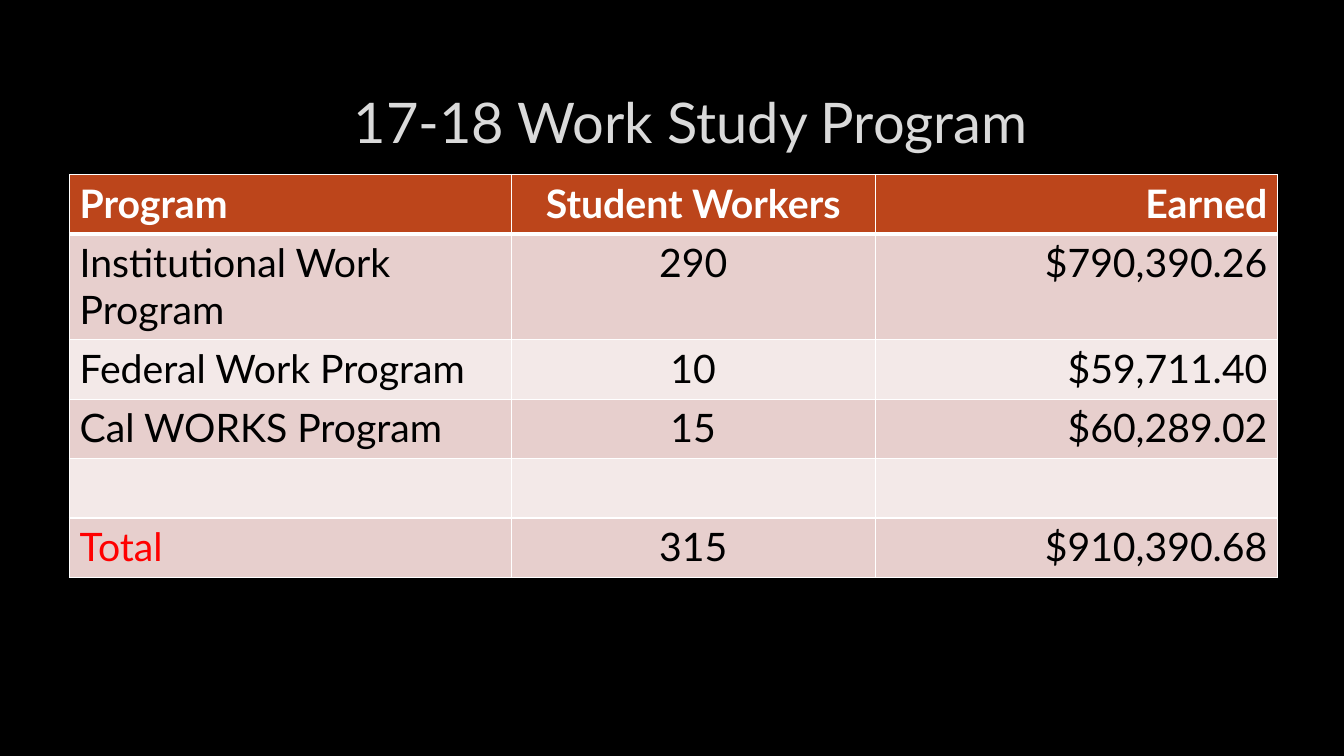
from lxml.etree import SubElement
from pptx import Presentation
from pptx.dml.color import RGBColor
from pptx.enum.text import MSO_ANCHOR, PP_ALIGN
from pptx.oxml import parse_xml
from pptx.oxml.ns import nsdecls, qn
from pptx.util import Inches, Pt

BLACK = RGBColor(0x00, 0x00, 0x00)
WHITE = RGBColor(0xFF, 0xFF, 0xFF)
RED = RGBColor(0xFF, 0x00, 0x00)
SILVER = RGBColor(0xDA, 0xDA, 0xDA)
RUST = RGBColor(0xBC, 0x45, 0x1B)
ROSE = RGBColor(0xE7, 0xCF, 0xCD)
PALE_ROSE = RGBColor(0xF3, 0xE9, 0xE8)

ROWS = [
    ("Program", "Student Workers", "Earned"),
    ("Institutional Work Program", "290", "$790,390.26"),
    ("Federal Work Program", "10", "$59,711.40"),
    ("Cal WORKS Program", "15", "$60,289.02"),
    ("", "", ""),
    ("Total", "315", "$910,390.68"),
]
COLUMN_WIDTHS = [4.38, 3.61, 3.99]
ROW_HEIGHTS = [0.59, 1.05, 0.59, 0.59, 0.59, 0.59]
ALIGNMENTS = [PP_ALIGN.LEFT, PP_ALIGN.CENTER, PP_ALIGN.RIGHT]


def write(frame, text, size=28, color=BLACK, bold=False, align=PP_ALIGN.LEFT):
    para = frame.paragraphs[0]
    para.alignment = align
    span = para.add_run()
    span.text = text
    span.font.name = "Lato"
    span.font.size = Pt(size)
    span.font.bold = bold
    span.font.color.rgb = color
    return span


def set_borders(cell, widths):
    """Draw white cell borders; widths maps the sides L, R, T and B to points."""
    properties = cell._tc.get_or_add_tcPr()
    for position, side in enumerate("LRTB"):
        line = parse_xml(
            f'<a:ln{side} {nsdecls("a")} w="{Pt(widths[side])}">'
            f'<a:solidFill><a:srgbClr val="{WHITE}"/></a:solidFill></a:ln{side}>'
        )
        properties.insert(position, line)


deck = Presentation()
deck.slide_width = Inches(13.33)
deck.slide_height = Inches(7.5)
page = deck.slides.add_slide(deck.slide_layouts[5])
page.background.fill.solid()
page.background.fill.fore_color.rgb = BLACK

title = page.shapes.title
title.left, title.top = Inches(1.19), Inches(0.67)
title.width, title.height = Inches(11.32), Inches(1.06)
title.text_frame.vertical_anchor = MSO_ANCHOR.MIDDLE
title_span = write(title.text_frame, "17-18 Work Study Program", size=40,
                   color=SILVER, align=PP_ALIGN.CENTER)
outline = parse_xml(
    f'<a:ln {nsdecls("a")} w="{Pt(0.75)}"><a:solidFill>'
    '<a:srgbClr val="404040"/></a:solidFill></a:ln>'
)
SubElement(outline[0][0], qn("a:alpha"), val="10000")
title_span.font._element.insert(0, outline)

table = page.shapes.add_table(
    len(ROWS), len(COLUMN_WIDTHS), Inches(0.69), Inches(1.73),
    Inches(sum(COLUMN_WIDTHS)), Inches(sum(ROW_HEIGHTS)),
).table
for column, width in zip(table.columns, COLUMN_WIDTHS):
    column.width = Inches(width)
for row, height in zip(table.rows, ROW_HEIGHTS):
    row.height = Inches(height)

for row_index, texts in enumerate(ROWS):
    is_header = row_index == 0
    band = RUST if is_header else ROSE if row_index % 2 else PALE_ROSE
    for column_index, text in enumerate(texts):
        cell = table.cell(row_index, column_index)
        cell.fill.solid()
        cell.fill.fore_color.rgb = band
        set_borders(cell, {"L": 1, "R": 1, "T": 3 if row_index == 1 else 1,
                           "B": 3 if is_header else 1})
        if text:
            color = WHITE if is_header else RED if text == "Total" else BLACK
            write(cell.text_frame, text, color=color, bold=is_header,
                  align=ALIGNMENTS[column_index])

deck.save("out.pptx")
